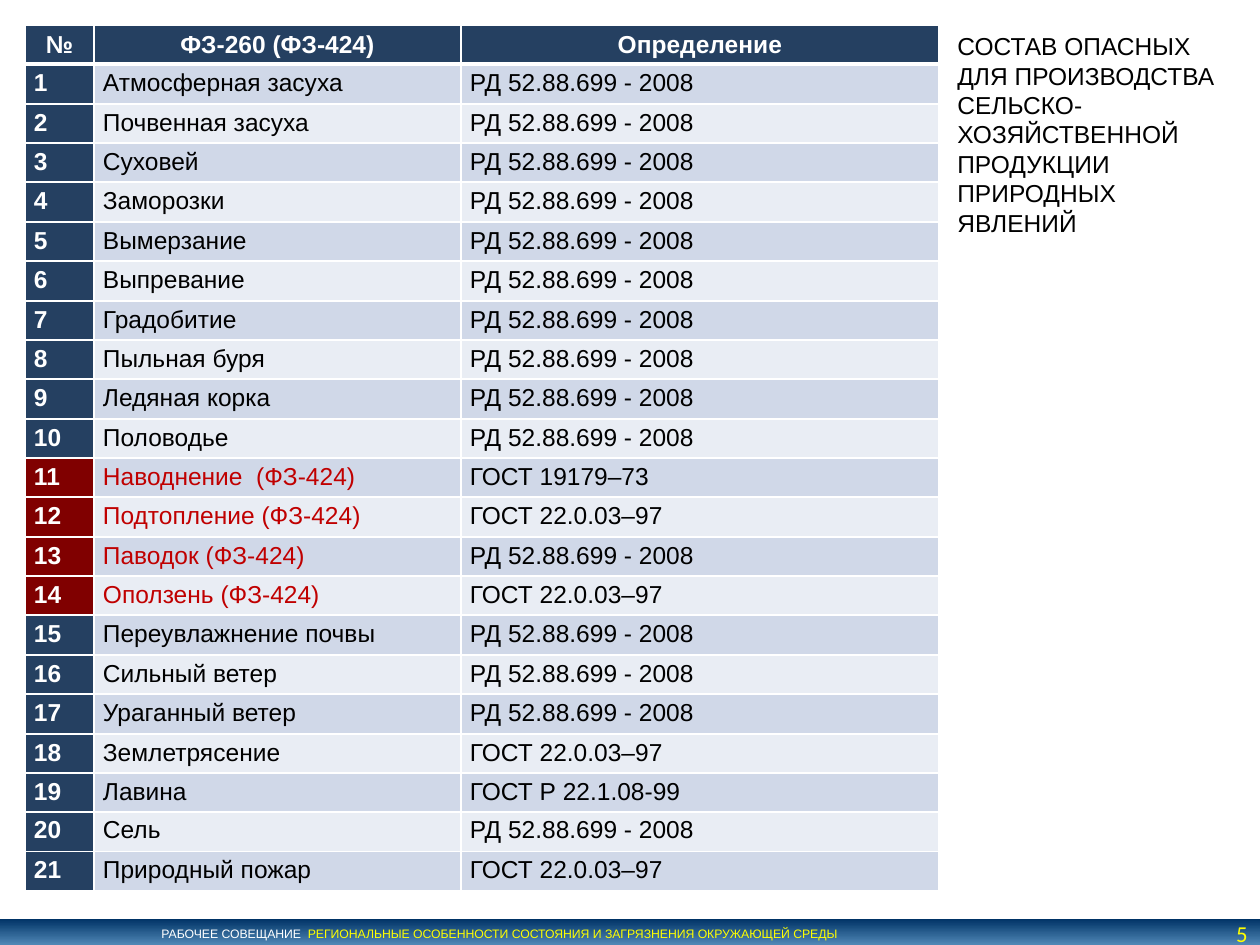
"""Build a slide listing natural hazards for agriculture and their defining standards."""
import pptx
import pptx.dml.color
import pptx.enum.shapes
import pptx.enum.text
import pptx.oxml
import pptx.oxml.ns
import pptx.util

PX = 914400 / 126
COLORS = {
    "white": "FFFFFF", "black": "000000", "navy": "254061", "maroon": "800000",
    "red": "C00000", "yellow": "FFFF00", "odd": "D0D8E8", "even": "E9EDF4",
    "bar_top": "003366", "bar_bottom": "5D95C3",
}
ALIGN = pptx.enum.text.PP_ALIGN
ANCHOR = pptx.enum.text.MSO_ANCHOR
RD = "РД 52.88.699 - 2008"
GOST = "ГОСТ 22.0.03–97"
HEADERS = ["№", "ФЗ-260 (ФЗ-424)", "Определение"]
HAZARDS = [
    ("Атмосферная засуха", RD), ("Почвенная засуха", RD), ("Суховей", RD),
    ("Заморозки", RD), ("Вымерзание", RD), ("Выпревание", RD),
    ("Градобитие", RD), ("Пыльная буря", RD), ("Ледяная корка", RD),
    ("Половодье", RD), ("Наводнение  (ФЗ-424)", "ГОСТ 19179–73"),
    ("Подтопление (ФЗ-424)", GOST), ("Паводок (ФЗ-424)", RD),
    ("Оползень (ФЗ-424)", GOST), ("Переувлажнение почвы", RD),
    ("Сильный ветер", RD), ("Ураганный ветер", RD), ("Землетрясение", GOST),
    ("Лавина", "ГОСТ Р 22.1.08-99"), ("Сель", RD), ("Природный пожар", GOST),
]
COLUMN_WIDTHS = [69, 367, 478]
TABLE_HEIGHT = 866


def px(length):
    """Turn pixels into EMU."""
    return pptx.util.Emu(round(length * PX))


def rgb(name):
    """Look up a named colour."""
    return pptx.dml.color.RGBColor.from_string(COLORS[name])


def add_span(para, text, size, color, bold=False, font="Arial"):
    """Append one formatted run to a paragraph."""
    span = para.add_run()
    span.text = text
    span.font.size = pptx.util.Pt(size)
    span.font.name = font
    span.font.bold = bold
    span.font.color.rgb = rgb(color)


def set_borders(cell, top, bottom):
    """Draw white cell borders, with top and bottom widths in points."""
    properties = cell._tc.get_or_add_tcPr()
    namespace = pptx.oxml.ns.nsdecls("a")
    widths = {"lnL": 1, "lnR": 1, "lnT": top, "lnB": bottom}
    for index, (tag, width) in enumerate(widths.items()):
        line = pptx.oxml.parse_xml(
            f'<a:{tag} {namespace} w="{pptx.util.Pt(width)}"><a:solidFill>'
            f'<a:srgbClr val="{COLORS["white"]}"/></a:solidFill></a:{tag}>')
        properties.insert(index, line)


def fill_cell(cell, text, fill, color, bold, row):
    """Write and style one table cell."""
    cell.margin_left = cell.margin_right = px(9)
    cell.margin_top = cell.margin_bottom = px(5)
    cell.vertical_anchor = ANCHOR.TOP if row else ANCHOR.MIDDLE
    cell.fill.solid()
    cell.fill.fore_color.rgb = rgb(fill)
    set_borders(cell, 3 if row == 1 else 1, 1 if row else 3)
    para = cell.text_frame.paragraphs[0]
    para.alignment = ALIGN.JUSTIFY if row else ALIGN.CENTER
    add_span(para, text, 14, color, bold)


def add_hazard_table(page):
    """Add the numbered table of hazards, with amended entries in red."""
    count = len(HAZARDS) + 1
    table = page.shapes.add_table(
        count, len(HEADERS), px(25), px(25), px(sum(COLUMN_WIDTHS)), px(TABLE_HEIGHT)).table
    for column, width in zip(table.columns, COLUMN_WIDTHS):
        column.width = px(width)
    edges = [round(TABLE_HEIGHT * index / count) for index in range(count + 1)]
    for row, top, bottom in zip(table.rows, edges, edges[1:]):
        row.height = px(bottom - top)
    for column, header in enumerate(HEADERS):
        fill_cell(table.cell(0, column), header, "navy", "white", True, 0)
    for row, (hazard, standard) in enumerate(HAZARDS, start=1):
        amended = "ФЗ-424" in hazard
        band = "odd" if row % 2 else "even"
        fill_cell(table.cell(row, 0), str(row), "maroon" if amended else "navy",
                  "white", True, row)
        fill_cell(table.cell(row, 1), hazard, band, "red" if amended else "black", False, row)
        fill_cell(table.cell(row, 2), standard, band, "black", False, row)


def add_footer_bar(page):
    """Add the gradient bar with the meeting name."""
    bar = page.shapes.add_shape(
        pptx.enum.shapes.MSO_SHAPE.RECTANGLE, 0, px(919), px(1260), px(30))
    bar.shadow.inherit = False
    bar.line.fill.background()
    bar.fill.gradient()
    bar.fill.gradient_angle = 270
    for stop, color in zip(bar.fill.gradient_stops, ("bar_top", "bar_bottom")):
        stop.color.rgb = rgb(color)
    bar.text_frame.vertical_anchor = ANCHOR.MIDDLE
    para = bar.text_frame.paragraphs[0]
    para.alignment = ALIGN.LEFT
    properties = para._p.get_or_add_pPr()
    properties.set("marL", str(px(149)))
    properties.set("indent", "0")
    add_span(para, "РАБОЧЕЕ СОВЕЩАНИЕ  ", 7, "white")
    add_span(para, "РЕГИОНАЛЬНЫЕ ОСОБЕННОСТИ СОСТОЯНИЯ И ЗАГРЯЗНЕНИЯ ОКРУЖАЮЩЕЙ СРЕДЫ",
             7, "yellow")


def add_text_box(page, left, top, width, height):
    """Add an empty wrapping text box."""
    box = page.shapes.add_textbox(px(left), px(top), px(width), px(height))
    box.text_frame.word_wrap = True
    return box


def add_heading(page):
    """Add the slide heading beside the table."""
    box = add_text_box(page, 945, 25, 282, 221)
    add_span(box.text_frame.paragraphs[0],
             "СОСТАВ ОПАСНЫХ ДЛЯ ПРОИЗВОДСТВА СЕЛЬСКО-ХОЗЯЙСТВЕННОЙ "
             "ПРОДУКЦИИ ПРИРОДНЫХ ЯВЛЕНИЙ", 14, "black")


def add_page_number(page):
    """Add the page number at the right end of the bar."""
    frame = add_text_box(page, 1160, 919, 100, 28).text_frame
    frame.margin_top = frame.margin_bottom = 0
    frame.vertical_anchor = ANCHOR.MIDDLE
    para = frame.paragraphs[0]
    para.alignment = ALIGN.RIGHT
    add_span(para, "5", 13, "yellow", font="Calibri")


def main():
    """Build and save the deck."""
    deck = pptx.Presentation()
    deck.slide_width, deck.slide_height = px(1260), px(945)
    page = deck.slides.add_slide(deck.slide_layouts[6])
    add_footer_bar(page)
    add_hazard_table(page)
    add_heading(page)
    add_page_number(page)
    deck.save("out.pptx")


if __name__ == "__main__":
    main()
